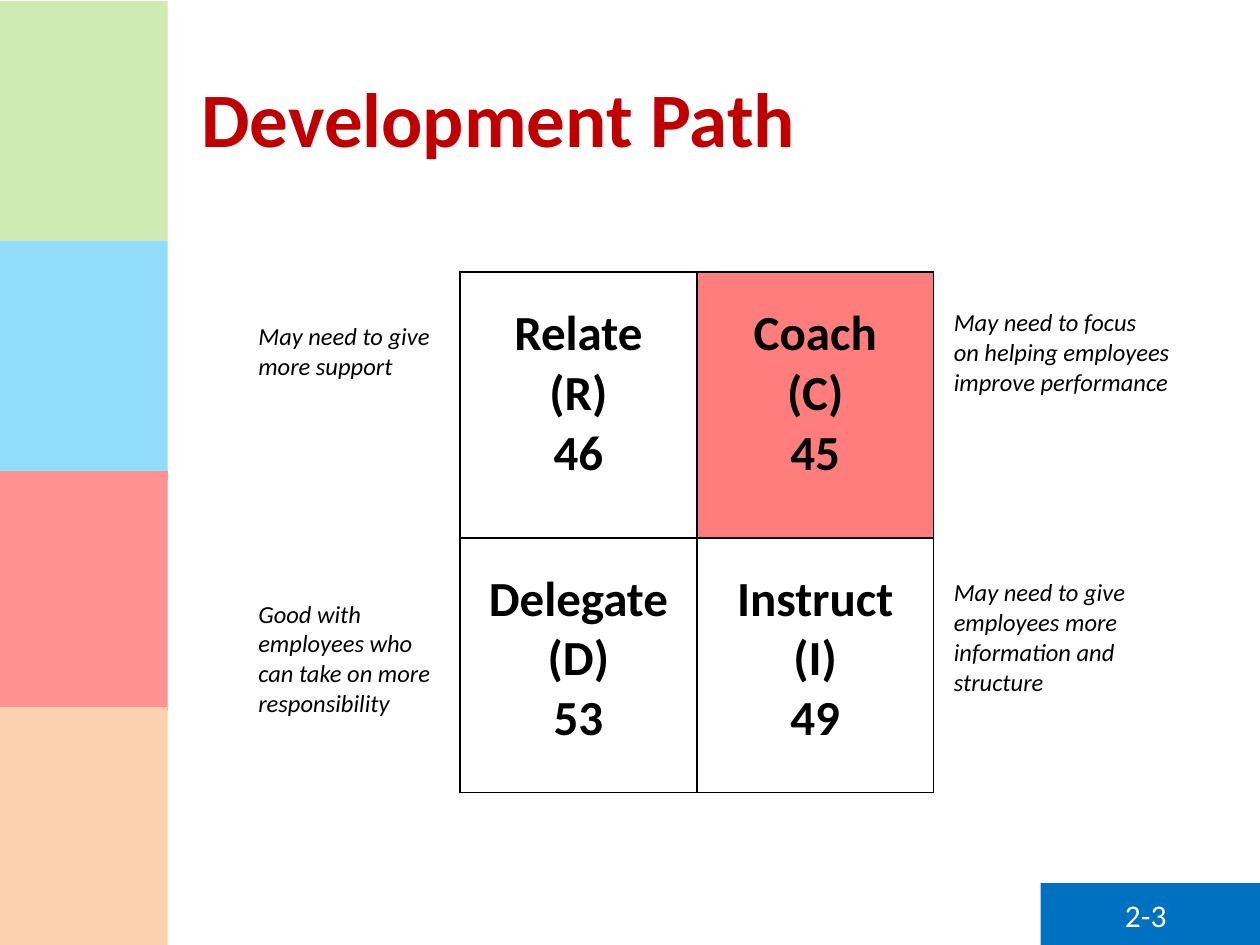
"""Build the Development Path slide with its four-style grid."""
from lxml import etree
from pptx import Presentation
from pptx.dml.color import RGBColor
from pptx.enum import shapes, text
from pptx.oxml import ns
from pptx.util import Inches, Pt

GREEN = RGBColor(0x92, 0xD0, 0x50)
SKY = RGBColor(0x00, 0xB0, 0xF0)
RED = RGBColor(0xFF, 0x00, 0x00)
ORANGE = RGBColor(0xF7, 0x96, 0x46)
BLUE = RGBColor(0x00, 0x70, 0xC0)
WHITE = RGBColor(0xFF, 0xFF, 0xFF)
BLACK = RGBColor(0x00, 0x00, 0x00)
CRIMSON = RGBColor(0xC0, 0x00, 0x00)
PINK = RGBColor(0xFF, 0x7D, 0x7D)
NO_GRID = "{2D5ABB26-0587-4C30-8999-92F81FD0307C}"

deck = Presentation()
deck.slide_width, deck.slide_height = Inches(10), Inches(7.5)
slide = deck.slides.add_slide(deck.slide_layouts[6])


def block(left, top, width, height, color):
    box = slide.shapes.add_shape(
        shapes.MSO_SHAPE.RECTANGLE, *map(Inches, (left, top, width, height)))
    box.shadow.inherit = False
    box.fill.solid()
    box.fill.fore_color.rgb = color
    box.line.fill.background()
    return box


def write(frame, words, size, color, **looks):
    para = frame.paragraphs[0]
    para.text = words
    for run in para.runs:
        run.font.color.rgb = color
        for name, value in {"name": "Calibri", "size": Pt(size), **looks}.items():
            setattr(run.font, name, value)
    return para


for top, color in ((0.01, GREEN), (1.91, SKY), (3.74, RED), (5.61, ORANGE)):
    block(0, top, 1.33, 1.9, color)
block(8.26, 7.01, 1.75, 0.5, BLUE)
veil = block(0, 0, 1.33, 7.5, WHITE)
tint = veil.fill._xPr.find(ns.qn("a:solidFill"))[0]
etree.SubElement(tint, ns.qn("a:alpha"), val="57000")

title = slide.shapes.add_textbox(*map(Inches, (1.5, 0.3, 8.25, 1.25))).text_frame
title.word_wrap = True
title.vertical_anchor = text.MSO_ANCHOR.MIDDLE
write(title, "Development Path", 44, CRIMSON, bold=True)

widths = (1.7, 1.88, 1.88, 2.1)
heights = (0.41, 2.11, 2.02)
grid = slide.shapes.add_table(
    3, 4, *map(Inches, (1.95, 1.75, sum(widths), sum(heights)))).table
grid.first_row = grid.horz_banding = False
grid._tbl.tblPr.find(ns.qn("a:tableStyleId")).text = NO_GRID
for col, width in zip(grid.columns, widths):
    col.width = Inches(width)
for row, height in zip(grid.rows, heights):
    row.height = Inches(height)

notes = (
    (1, 0, 0.4, "May need to give more support"),
    (1, 3, 0.29, "May need to focus\von helping employees improve performance"),
    (2, 0, 0.49, "Good with\vemployees who\vcan take on more responsibility"),
    (2, 3, 0.32, "May need to give employees more information and structure"),
)
for row, col, top, words in notes:
    cell = grid.cell(row, col)
    cell.margin_top = Inches(top)
    cell.margin_left = Inches(0.16 if col else 0.1)
    write(cell.text_frame, words, 14, BLACK, italic=True)

styles = (
    (1, 1, "Relate\v(R)\v46"),
    (1, 2, "Coach\v(C)\v45"),
    (2, 1, "Delegate\v(D)\v53"),
    (2, 2, "Instruct\v(I)\v49"),
)
for row, col, words in styles:
    cell = grid.cell(row, col)
    cell.margin_top = Inches(0.25)
    para = write(cell.text_frame, words, 28, BLACK, bold=True)
    para.alignment = text.PP_ALIGN.CENTER
    props = cell._tc.get_or_add_tcPr()
    for side in "LRTB":
        edge = etree.SubElement(props, ns.qn(f"a:ln{side}"), w=str(Pt(1)))
        ink = etree.SubElement(edge, ns.qn("a:solidFill"))
        etree.SubElement(ink, ns.qn("a:srgbClr"), val=str(BLACK))

for cell in grid.iter_cells():
    cell.fill.background()
coach = grid.cell(1, 2)
coach.fill.solid()
coach.fill.fore_color.rgb = PINK

page = slide.shapes.add_textbox(*map(Inches, (8.83, 7.06, 0.75, 0.4))).text_frame
page.word_wrap = True
write(page, "2-3", 18, WHITE)

deck.save("out.pptx")
